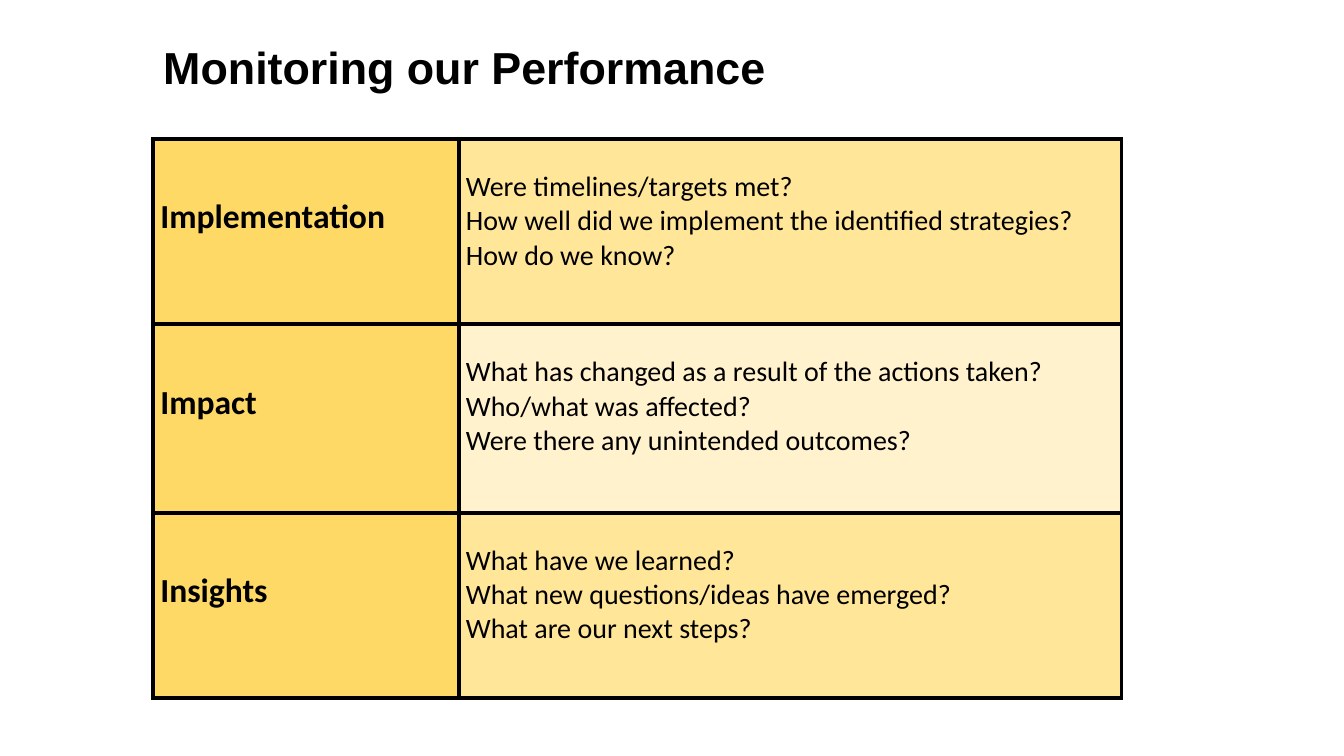
from lxml.etree import SubElement
from pptx import Presentation
from pptx.dml.color import RGBColor
from pptx.enum.text import MSO_ANCHOR, MSO_AUTO_SIZE, PP_ALIGN
from pptx.oxml.ns import qn
from pptx.util import Cm, Pt

BLACK = "000000"
LABEL_FILL = "FFD966"
TITLE_FONT = {"name": "Arial", "size": Pt(32), "bold": True}
LABEL_FONT = {"name": "Calibri", "size": Pt(24), "bold": True}
QUESTION_FONT = {"name": "Calibri", "size": Pt(20), "bold": False}
LABEL_PARA = {"line_spacing": 1.07, "space_after": Pt(8)}

# Each row: label, questions, fill of the questions, height in cm
ROWS = [
    ("Implementation",
     ["Were timelines/targets met?",
      "How well did we implement the identified strategies?",
      "How do we know?"], "FFE699", 4.67),
    ("Impact",
     ["What has changed as a result of the actions taken?",
      "Who/what was affected?",
      "Were there any unintended outcomes?"], "FFF2CC", 4.75),
    ("Insights",
     ["What have we learned?",
      "What new questions/ideas have emerged?",
      "What are our next steps?"], "FFE699", 4.67),
]


def color(hex_string):
    return RGBColor.from_string(hex_string)


def apply(target, values):
    for name, value in values.items():
        setattr(target, name, value)


def write(frame, lines, font, para_format):
    for index, line in enumerate(lines):
        para = frame.paragraphs[0] if index == 0 else frame.add_paragraph()
        apply(para, para_format)
        span = para.add_run()
        span.text = line
        apply(span.font, font)
        span.font.color.rgb = color(BLACK)


def add_borders(cell, width):
    properties = cell._tc.get_or_add_tcPr()
    for side in ("a:lnL", "a:lnR", "a:lnT", "a:lnB"):
        line = SubElement(properties, qn(side), w=str(width))
        fill = SubElement(line, qn("a:solidFill"))
        SubElement(fill, qn("a:srgbClr"), val=BLACK)


def fill_cell(cell, lines, fill, margin_top, font, para_format):
    add_borders(cell, Pt(3))
    cell.fill.solid()
    cell.fill.fore_color.rgb = color(fill)
    apply(cell, {"margin_left": Cm(0.18), "margin_right": Cm(0.18),
                 "margin_top": margin_top, "margin_bottom": 0,
                 "vertical_anchor": MSO_ANCHOR.TOP})
    write(cell.text_frame, lines, font, para_format)


def place_title(page, left, top, width, height):
    box = page.shapes.title
    apply(box, {"left": left, "top": top, "width": width, "height": height})
    apply(box.text_frame, {"word_wrap": True, "auto_size": MSO_AUTO_SIZE.NONE,
                           "vertical_anchor": MSO_ANCHOR.MIDDLE})
    write(box.text_frame, ["Monitoring our Performance"], TITLE_FONT,
          {"alignment": PP_ALIGN.LEFT})


def place_questions(page, left, top, width, label_width):
    height = Cm(sum(row[3] for row in ROWS))
    table = page.shapes.add_table(len(ROWS), 2, left, top, width, height).table
    apply(table, {"first_row": False, "horz_banding": False})
    table.columns[0].width = label_width
    table.columns[1].width = width - label_width
    for index, (label, questions, fill, row_height) in enumerate(ROWS):
        table.rows[index].height = Cm(row_height)
        fill_cell(table.cell(index, 0), [label], LABEL_FILL, Cm(1.39),
                  LABEL_FONT, LABEL_PARA)
        fill_cell(table.cell(index, 1), questions, fill, Cm(0.78),
                  QUESTION_FONT, {})


def main():
    deck = Presentation()
    apply(deck, {"slide_width": Cm(33.87), "slide_height": Cm(19.05)})
    page = deck.slides.add_slide(deck.slide_layouts[5])
    # Heading
    place_title(page, Cm(3.86), Cm(0.86), Cm(23.4), Cm(1.63))
    # Table of review questions
    place_questions(page, Cm(3.86), Cm(3.5), Cm(24.4), Cm(7.7))
    deck.save("out.pptx")


if __name__ == "__main__":
    main()
